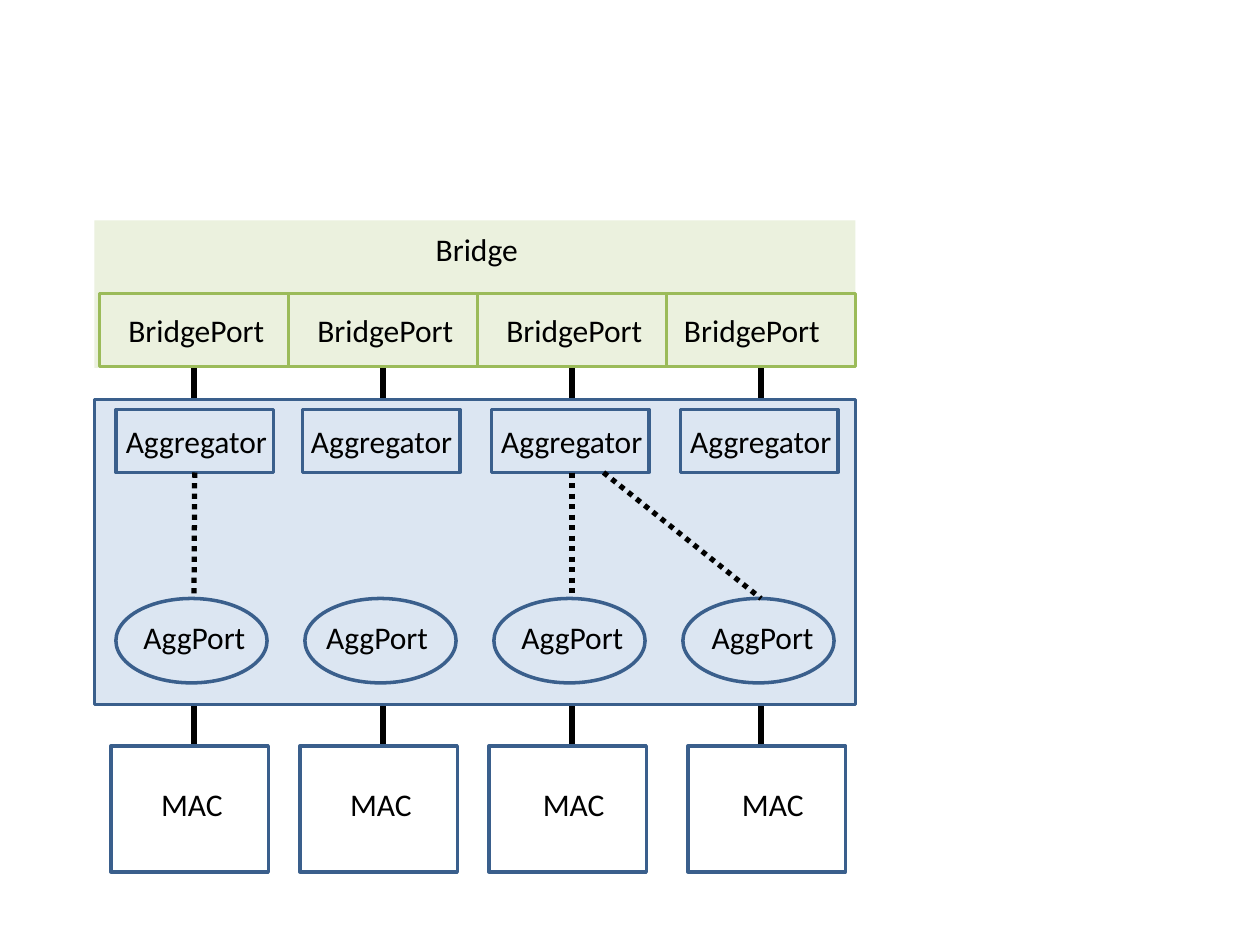
from lxml import etree
from pptx import Presentation
from pptx import util as u
from pptx.dml import color
from pptx.enum import dml, shapes, text
from pptx.oxml import ns

BLACK, BLUE, GREEN = "000000", "3A5F8C", "9BBB59"
PALE_BLUE, PALE_GREEN = "DCE6F2", "EBF1DE"
RECTANGLE, OVAL = shapes.MSO_SHAPE.RECTANGLE, shapes.MSO_SHAPE.OVAL
COLUMN_STEP = 1.5
COLUMNS = [1.54 + COLUMN_STEP * column for column in range(4)]
LAYERS = [
    {"label": "BridgePort", "kind": RECTANGLE, "line": GREEN, "top": 2.33, "size": (1.5, 0.58),
     "lefts": [0.79, 2.29, 3.79, 5.29],
     "label_lefts": [0.92, 2.42, 3.92, 5.33], "label_top": 2.42, "label_width": 1.29},
    {"label": "Aggregator", "kind": RECTANGLE, "line": BLUE, "top": 3.25, "size": (1.25, 0.5),
     "lefts": [0.92, 2.4, 3.9, 5.4],
     "label_lefts": [0.9, 2.37, 3.88, 5.38], "label_top": 3.3, "label_width": 1.33},
    {"label": "AggPort", "kind": OVAL, "line": BLUE, "top": 4.75, "size": (1.2, 0.67),
     "lefts": [0.92, 2.42, 3.92, 5.42],
     "label_lefts": [1.04, 2.49, 4.04, 5.55], "label_top": 4.86, "label_width": 1.02},
    {"label": "MAC", "kind": RECTANGLE, "line": BLUE, "top": 5.92, "size": (1.25, 1),
     "lefts": [0.88, 2.38, 3.88, 5.46],
     "label_lefts": [1.18, 2.68, 4.21, 5.79], "label_top": 6.18, "label_width": 0.7},
]
SELECTIONS = [(COLUMNS[0], COLUMNS[0]), (COLUMNS[2], COLUMNS[2]), (4.79, COLUMNS[3])]


def rgb(value):
    """Return the colour for a hex string."""
    return color.RGBColor.from_string(value)


def add_box(slide, kind, left, top, width, height, fill=None, line=None):
    """Add a preset shape with an optional fill and outline."""
    shape = slide.shapes.add_shape(kind, *map(u.Inches, (left, top, width, height)))
    shape.shadow.inherit = False
    if fill:
        shape.fill.solid()
        shape.fill.fore_color.rgb = rgb(fill)
    else:
        shape.fill.background()
    if line:
        shape.line.color.rgb = rgb(line)
        shape.line.width = u.Pt(2)
    else:
        shape.line.fill.background()
    return shape


def add_label(slide, words, left, top, width, height=0.4, size=18, font="Calibri", ink=BLACK):
    """Add an unwrapped line of text."""
    box = slide.shapes.add_textbox(*map(u.Inches, (left, top, width, height)))
    frame = box.text_frame
    frame.word_wrap = False
    frame.auto_size = text.MSO_AUTO_SIZE.SHAPE_TO_FIT_TEXT
    run = frame.paragraphs[0].add_run()
    run.text = words
    run.font.size = u.Pt(size)
    run.font.name = font
    run.font.color.rgb = rgb(ink)


def add_link(slide, start, end, dash=None):
    """Add a straight black connector between two points."""
    link = slide.shapes.add_connector(shapes.MSO_CONNECTOR.STRAIGHT, *map(u.Inches, start + end))
    link.line.color.rgb = rgb(BLACK)
    link.line.width = u.Pt(3)
    if dash:
        link.line.dash_style = dash
    etree.SubElement(link.element.spPr, ns.qn("a:effectLst"))
    return link


def add_layer(slide, layer):
    """Add a row of labelled boxes and return the boxes."""
    boxes = []
    for left, label_left in zip(layer["lefts"], layer["label_lefts"]):
        boxes.append(add_box(slide, layer["kind"], left, layer["top"], *layer["size"],
                             line=layer["line"]))
        add_label(slide, layer["label"], label_left, layer["label_top"], layer["label_width"])
    return boxes


def main():
    """Build the link aggregation slide."""
    presentation = Presentation()
    presentation.slide_width, presentation.slide_height = u.Inches(10), u.Inches(7.5)
    slide = presentation.slides.add_slide(presentation.slide_layouts[6])

    port_links = [add_link(slide, (x, 2.92), (x, 5.92)) for x in COLUMNS]
    add_box(slide, RECTANGLE, 0.75, 3.17, 6.04, 2.42, fill=PALE_BLUE, line=BLUE)
    add_box(slide, RECTANGLE, 0.75, 1.75, 6.04, 1.17, fill=PALE_GREEN)
    add_label(slide, "Bridge", 3.36, 1.78, 0.86)

    bridge_ports, aggregators, *_ = [add_layer(slide, layer) for layer in LAYERS]
    for link, port in zip(port_links, bridge_ports):
        link.begin_connect(port, 2)

    selection_links = [add_link(slide, (start, 3.75), (end, 4.75), dml.MSO_LINE.ROUND_DOT)
                       for start, end in SELECTIONS]
    selection_links[0].begin_connect(aggregators[0], 2)
    presentation.save("out.pptx")


if __name__ == "__main__":
    main()
